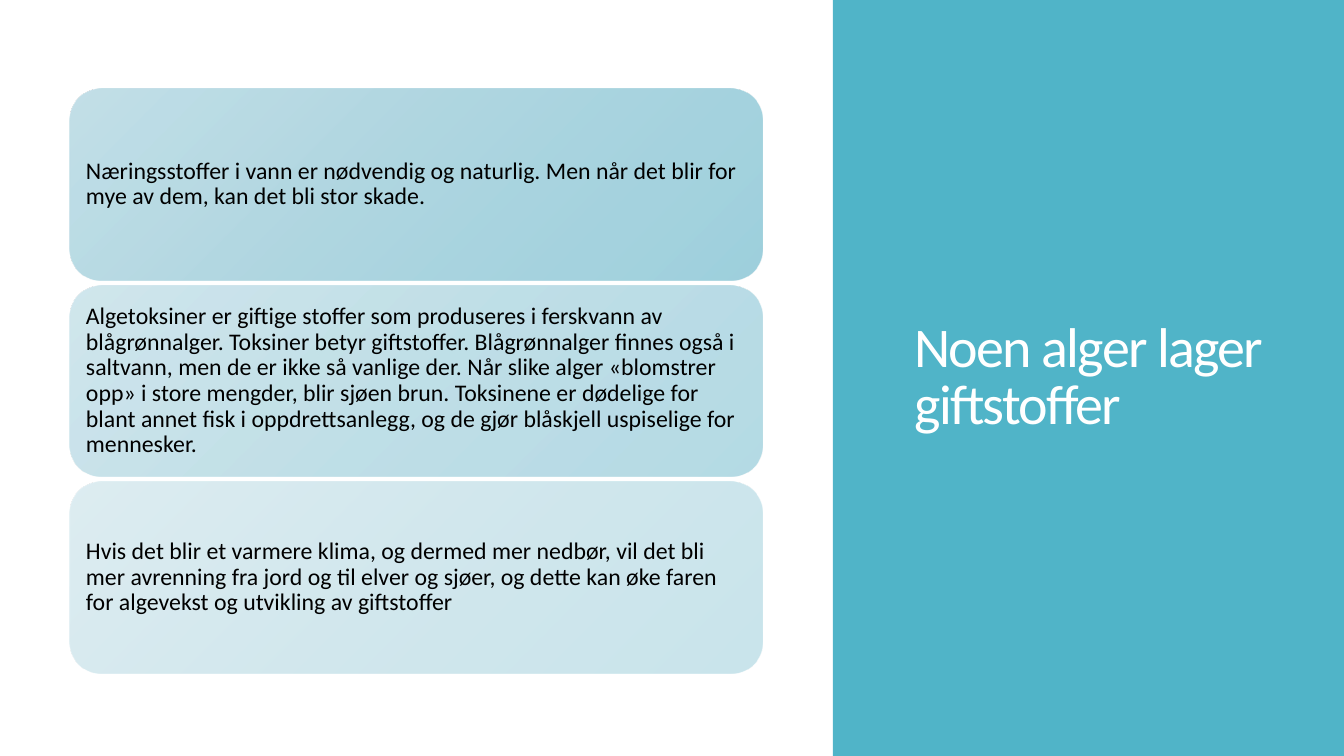
import pptx
import pptx.dml.color
import pptx.enum.shapes
import pptx.enum.text
import pptx.oxml
import pptx.oxml.ns
import pptx.util
from pptx.util import Inches

COLOURS = {
    "panel": "50B4C8",
    "title": "FFFFFF",
    "text": "000000",
    "card_light": "BDDCE5",
    "card_middle": "A5D1DD",
    "card_dark": "94CBD9",
}
FONT = "Calibri"
TITLE = "Noen alger lager giftstoffer"
CARDS = [
    "Næringsstoffer i vann er nødvendig og naturlig. Men når det blir for mye av dem, "
    "kan det bli stor skade.",
    "Algetoksiner er giftige stoffer som produseres i ferskvann av blågrønnalger. "
    "Toksiner betyr giftstoffer. Blågrønnalger finnes også i saltvann, men de er ikke "
    "så vanlige der. Når slike alger «blomstrer opp» i store mengder, blir sjøen brun. "
    "Toksinene er dødelige for blant annet fisk i oppdrettsanlegg, og de gjør blåskjell "
    "uspiselige for mennesker.",
    "Hvis det blir et varmere klima, og dermed mer nedbør, vil det bli mer avrenning fra "
    "jord og til elver og sjøer, og dette kan øke faren for algevekst og utvikling av "
    "giftstoffer",
]


def rgb(name):
    """Return the named colour."""
    return pptx.dml.color.RGBColor.from_string(COLOURS[name])


def format_text(shape, text, size, colour, line_spacing):
    """Write left-aligned, vertically centred text into a shape."""
    frame = shape.text_frame
    frame.text = text
    frame.word_wrap = True
    frame.auto_size = pptx.enum.text.MSO_AUTO_SIZE.NONE
    frame.vertical_anchor = pptx.enum.text.MSO_ANCHOR.MIDDLE
    paragraph = frame.paragraphs[0]
    paragraph.alignment = pptx.enum.text.PP_ALIGN.LEFT
    paragraph.line_spacing = line_spacing
    paragraph.font.name = FONT
    paragraph.font.size = pptx.util.Pt(size)
    paragraph.font.color.rgb = rgb(colour)
    return frame


def fill_gradient(shape, opacity):
    """Fill a shape with the diagonal card gradient at an opacity in percent."""
    stops = "".join(
        f'<a:gs pos="{position * 1000}"><a:srgbClr val="{COLOURS[name]}">'
        f'<a:alpha val="{opacity * 1000}"/></a:srgbClr></a:gs>'
        for position, name in ((0, "card_light"), (50, "card_middle"), (100, "card_dark"))
    )
    gradient = pptx.oxml.parse_xml(
        f'<a:gradFill {pptx.oxml.ns.nsdecls("a")} rotWithShape="1"><a:gsLst>{stops}</a:gsLst>'
        '<a:lin ang="2700000" scaled="0"/></a:gradFill>'
    )
    shape.fill.gradient()
    placeholder_fill = shape.element.spPr.find(pptx.oxml.ns.qn("a:gradFill"))
    shape.element.spPr.replace(placeholder_fill, gradient)


def add_title_panel(slide, left, top, width, height):
    """Draw the coloured panel with the slide title on it."""
    panel = slide.shapes.add_shape(
        pptx.enum.shapes.MSO_SHAPE.RECTANGLE, left, top, width, height
    )
    panel.shadow.inherit = False
    panel.fill.solid()
    panel.fill.fore_color.rgb = rgb("panel")
    panel.line.fill.background()

    title = slide.shapes.title
    title.left, title.top = left + Inches(0.71), top + Inches(0.7)
    title.width, title.height = width - Inches(1.41), height - Inches(1.39)
    frame = format_text(title, TITLE, 40, "title", 0.85)
    frame.paragraphs[0].runs[0]._r.get_or_add_rPr().set("spc", "-120")
    title.element.addprevious(panel.element)


def add_cards(slide, left, top, width, height, gap):
    """Stack the text cards in the box, each paler than the one above."""
    card_height = (height - gap * (len(CARDS) - 1)) // len(CARDS)
    for index, text in enumerate(CARDS):
        card = slide.shapes.add_shape(
            pptx.enum.shapes.MSO_SHAPE.ROUNDED_RECTANGLE,
            left, top + index * (card_height + gap), width, card_height,
        )
        card.shadow.inherit = False
        card.line.fill.background()
        fill_gradient(card, 90 - 20 * index)
        frame = format_text(card, text, 17, "text", 0.9)
        frame.margin_left = frame.margin_right = Inches(0.07)
        frame.margin_top = frame.margin_bottom = Inches(0.07)


def main():
    """Build and save the slide."""
    presentation = pptx.Presentation()
    presentation.slide_width = Inches(13.33)
    presentation.slide_height = Inches(7.5)
    slide = presentation.slides.add_slide(presentation.slide_layouts[5])
    add_title_panel(slide, Inches(8.26), Inches(0), Inches(5.07), Inches(7.5))
    add_cards(slide, Inches(0.69), Inches(0.88), Inches(6.87), Inches(5.8), Inches(0.05))
    presentation.save("out.pptx")


if __name__ == "__main__":
    main()
